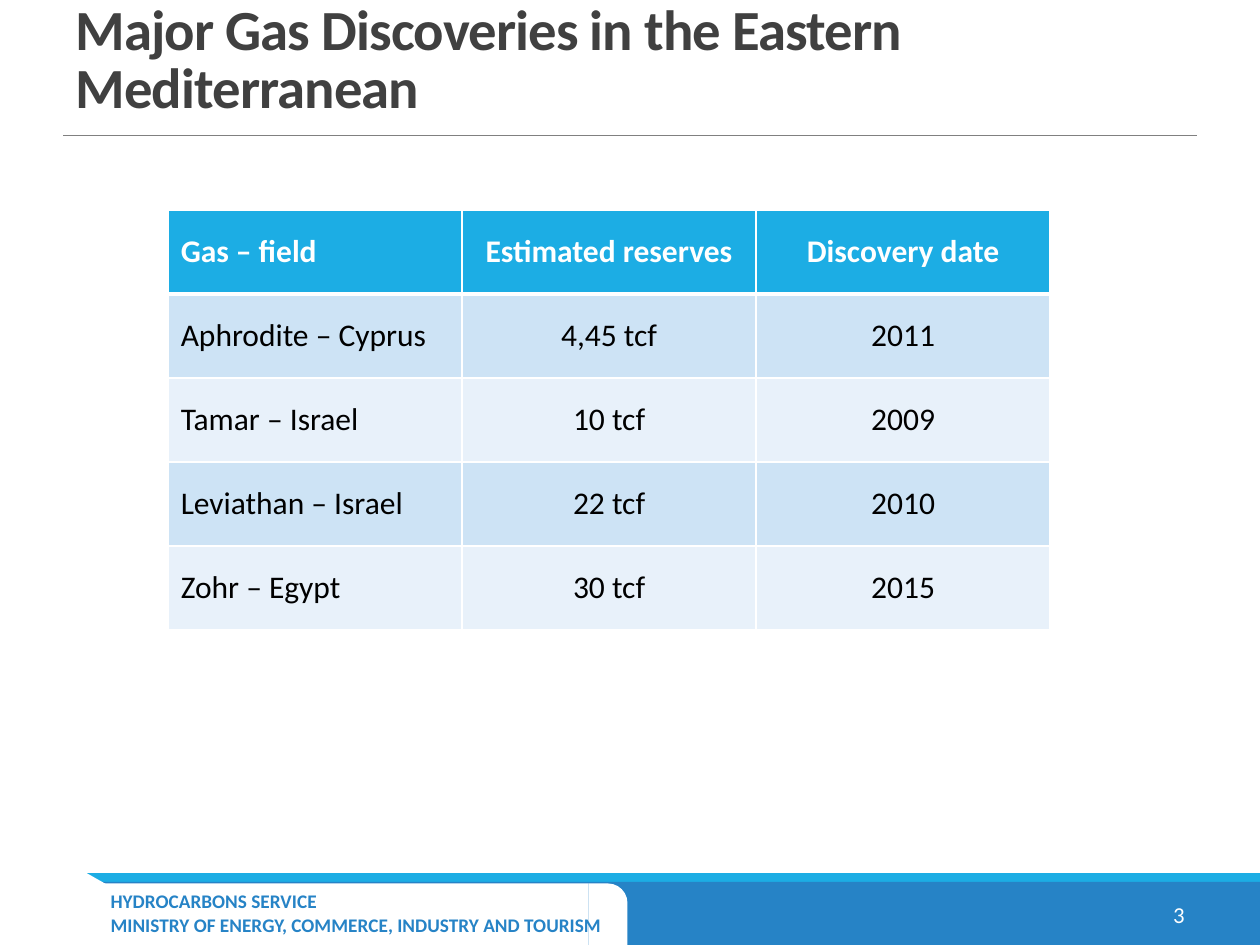
import pptx
import pptx.util
import pptx.dml.color
import pptx.enum.shapes
import pptx.enum.text
import pptx.oxml
import pptx.oxml.ns
from lxml import etree

Cm, Pt = pptx.util.Cm, pptx.util.Pt
MSO = pptx.enum.shapes.MSO_SHAPE
ALIGN = pptx.enum.text.PP_ALIGN
ANCHOR = pptx.enum.text.MSO_ANCHOR
FONT = "Calibri"

# Content
TITLE = "Major Gas Discoveries in the Eastern Mediterranean"
FIELDS = [
    ("Gas – field", "Estimated reserves", "Discovery date"),
    ("Aphrodite – Cyprus", "4,45 tcf", "2011"),
    ("Tamar – Israel", "10 tcf", "2009"),
    ("Leviathan – Israel", "22 tcf", "2010"),
    ("Zohr – Egypt", "30 tcf", "2015"),
]
FOOTER = ["HYDROCARBONS SERVICE",
          "MINISTRY OF ENERGY, COMMERCE, INDUSTRY AND TOURISM"]
PAGE = "3"
COLORS = {"sky": "1CADE4", "blue": "2683C6", "white": "FFFFFF", "rule": "808080",
          "title": "404040", "text": "000000", "band": "CDE3F5", "pale": "E8F1FA"}

# Footer shapes: kind, left, top, width, height (cm), colour, adjustments
FOOTER_SHAPES = [
    (MSO.RECTANGLE, 0.25, 17.6, 25.15, 0.18, "sky", []),
    (MSO.RECTANGLE, 0, 17.78, 25.4, 1.27, "blue", []),
    (MSO.SNIP_2_DIAG_RECTANGLE, 0, 17.81, 11.86, 1.24, "white", [0, 0]),
    (MSO.RIGHT_TRIANGLE, 0, 16.61, 2.82, 1.6, "white", []),
    (MSO.ROUND_1_RECTANGLE, 11.86, 17.81, 0.79, 1.24, "white", [0.5]),
]


def rgb(name):
    return pptx.dml.color.RGBColor.from_string(COLORS[name])


def style(p, size, color, bold=False, align=ALIGN.LEFT):
    p.alignment = align
    for r in p.runs:
        f = r.font
        f.name, f.size, f.bold = FONT, Pt(size), bold
        f.color.rgb = rgb(color)


def add_text(s, box, lines, size, color, bold=False, align=ALIGN.LEFT, anchor=ANCHOR.TOP):
    tf = s.shapes.add_textbox(*map(Cm, box)).text_frame
    tf.word_wrap = True
    tf.vertical_anchor = anchor
    tf.text = "\n".join(lines)
    for p in tf.paragraphs:
        style(p, size, color, bold, align)


def set_borders(cell, bottom):
    tcPr = cell._tc.get_or_add_tcPr()
    widths = {"lnL": 1, "lnR": 1, "lnT": 1, "lnB": bottom}
    for i, (side, width) in enumerate(widths.items()):
        ln = etree.Element(pptx.oxml.ns.qn("a:" + side), w=str(Pt(width)))
        fill = etree.SubElement(ln, pptx.oxml.ns.qn("a:solidFill"))
        etree.SubElement(fill, pptx.oxml.ns.qn("a:srgbClr"), val=COLORS["white"])
        tcPr.insert(i, ln)


prs = pptx.Presentation()
prs.slide_width, prs.slide_height = Cm(25.4), Cm(19.05)
s = prs.slides.add_slide(prs.slide_layouts[5])

# Title
title = s.shapes.title
title.left, title.top, title.width, title.height = map(Cm, (1.27, 0.79, 22.86, 1.75))
tf = title.text_frame
tf.text = TITLE
tf.word_wrap = True
tf.auto_size = pptx.enum.text.MSO_AUTO_SIZE.NONE
tf.vertical_anchor = ANCHOR.BOTTOM
p = tf.paragraphs[0]
p.line_spacing = 0.85
style(p, 32.4, "title", bold=True)
p.runs[0].font._element.set("spc", "-50")

# Rule under the title
rule = s.shapes.add_connector(pptx.enum.shapes.MSO_CONNECTOR.STRAIGHT,
                              Cm(1.27), Cm(2.74), Cm(24.13), Cm(2.74))
rule.line.color.rgb = rgb("rule")
rule.line.width = Pt(0.5)
etree.SubElement(rule._element.spPr, pptx.oxml.ns.qn("a:effectLst"))

# Footer band and tab
for kind, left, top, width, height, color, adjustments in FOOTER_SHAPES:
    sp = s.shapes.add_shape(kind, Cm(left), Cm(top), Cm(width), Cm(height))
    sp.shadow.inherit = False
    sp.fill.solid()
    sp.fill.fore_color.rgb = rgb(color)
    sp.line.fill.background()
    for i, value in enumerate(adjustments):
        sp.adjustments[i] = value
add_text(s, (1.98, 17.81, 10.72, 1.19), FOOTER, 11, "blue", bold=True)
add_text(s, (22.15, 17.93, 1.98, 1.02), [PAGE], 13, "white",
         align=ALIGN.RIGHT, anchor=ANCHOR.MIDDLE)

# Table of discoveries
table = s.shapes.add_table(len(FIELDS), len(FIELDS[0]), Cm(3.39), Cm(4.23),
                           Cm(17.78), Cm(8.47)).table
for i, row in enumerate(FIELDS):
    header = i == 0
    fill = "sky" if header else ("band" if i % 2 else "pale")
    for j, value in enumerate(row):
        cell = table.cell(i, j)
        cell.text = value
        cell.vertical_anchor = ANCHOR.MIDDLE
        cell.fill.solid()
        cell.fill.fore_color.rgb = rgb(fill)
        set_borders(cell, bottom=3 if header else 1)
        style(cell.text_frame.paragraphs[0], 18, "white" if header else "text",
              header, ALIGN.CENTER if j else ALIGN.LEFT)

prs.save("out.pptx")
